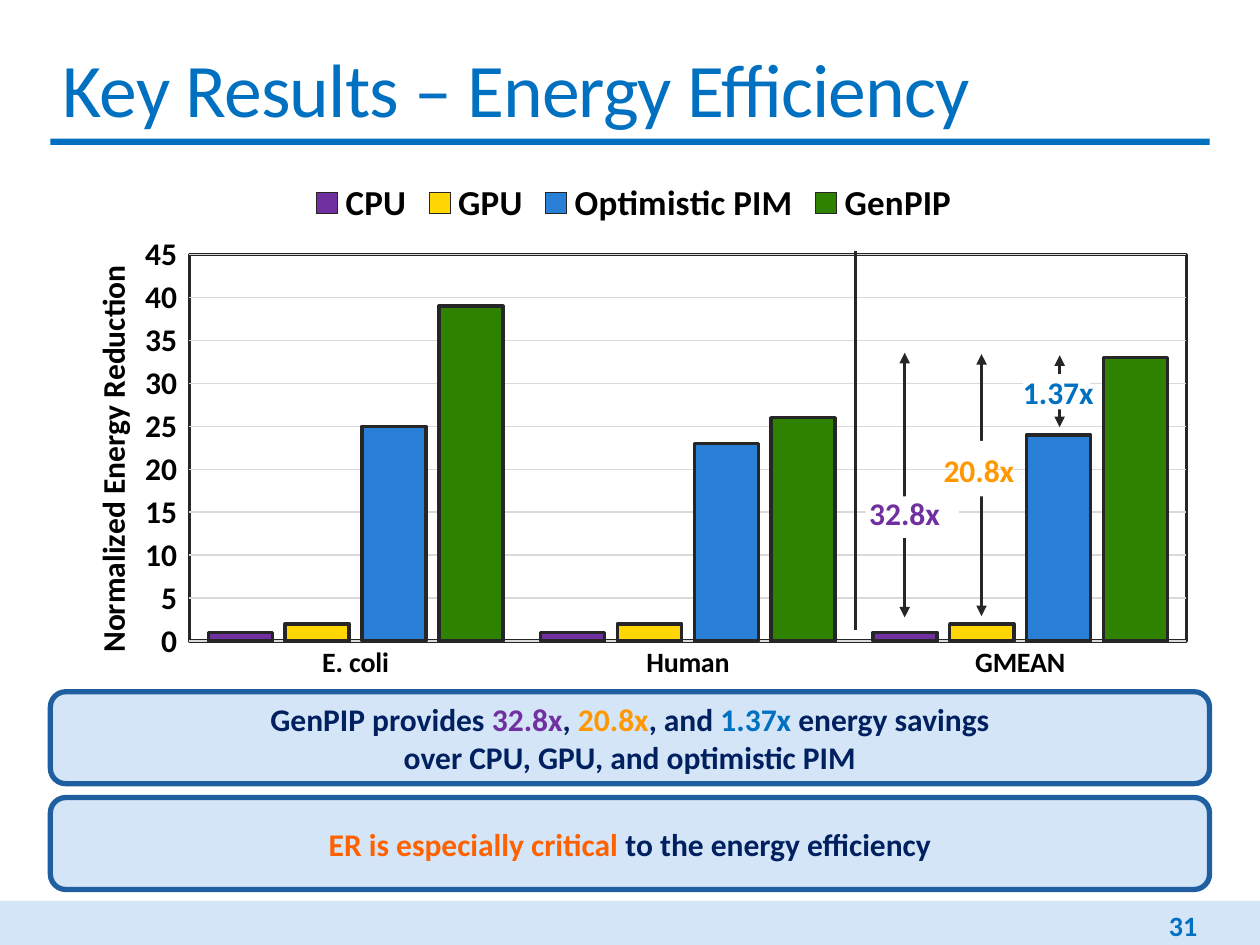
from dataclasses import dataclass

from lxml import etree
from pptx import Presentation
from pptx.chart.data import CategoryChartData
from pptx.dml.color import RGBColor
from pptx.enum.chart import XL_CHART_TYPE, XL_LEGEND_POSITION, XL_TICK_MARK
from pptx.enum.shapes import MSO_CONNECTOR, MSO_SHAPE
from pptx.enum.text import MSO_ANCHOR, PP_ALIGN
from pptx.oxml import parse_xml
from pptx.oxml.ns import nsdecls, qn
from pptx.util import Inches, Pt

COLUMN_CHART = XL_CHART_TYPE.COLUMN_CLUSTERED
LEGEND_TOP = XL_LEGEND_POSITION.TOP
TICK_NONE, TICK_OUT = XL_TICK_MARK.NONE, XL_TICK_MARK.OUTSIDE
STRAIGHT = MSO_CONNECTOR.STRAIGHT
RECTANGLE, ROUNDED = MSO_SHAPE.RECTANGLE, MSO_SHAPE.ROUNDED_RECTANGLE
TOP, MIDDLE = MSO_ANCHOR.TOP, MSO_ANCHOR.MIDDLE
LEFT, CENTER, RIGHT = PP_ALIGN.LEFT, PP_ALIGN.CENTER, PP_ALIGN.RIGHT


@dataclass(frozen=True)
class Theme:
    font: str = "Calibri"
    accent: str = "0070C0"
    pale: str = "D4E5F7"
    frame: str = "1F5FA0"
    navy: str = "002060"
    purple: str = "7030A0"
    amber: str = "FF9800"
    orange: str = "FE6200"
    yellow: str = "FFD602"
    blue: str = "297FD5"
    green: str = "2F8100"
    ink: str = "262626"
    grid: str = "D9D9D9"
    white: str = "FFFFFF"
    black: str = "000000"
    title_size: float = 43.2
    legend_size: int = 20
    body_size: int = 18
    small_size: int = 16


def rgb(color):
    return RGBColor.from_string(color)


class SlideBuilder:
    """Draws on one slide; lengths are cells of a 100 x 75 grid."""

    columns, rows = 100, 75

    def __init__(self, presentation, theme):
        self.theme = theme
        self.cell_width = presentation.slide_width / self.columns
        self.cell_height = presentation.slide_height / self.rows
        self.slide = presentation.slides.add_slide(presentation.slide_layouts[6])
        self.shapes = self.slide.shapes

    def point(self, column, row):
        return round(column * self.cell_width), round(row * self.cell_height)

    def box(self, column, row, width, height):
        return *self.point(column, row), *self.point(width, height)

    def set_font(self, font, size, color, bold=True):
        font.name, font.size, font.bold = self.theme.font, Pt(size), bold
        font.color.rgb = rgb(color)

    def set_text(self, shape, paragraphs, size, align=LEFT, anchor=TOP, bold=True):
        """Each paragraph is a list of (text, color) runs."""
        frame = shape.text_frame
        frame.word_wrap = True
        frame.vertical_anchor = anchor
        for index, runs in enumerate(paragraphs):
            paragraph = frame.add_paragraph() if index else frame.paragraphs[0]
            paragraph.alignment = align
            self.set_font(paragraph.font, size, runs[0][1], bold)
            for text, color in runs:
                run = paragraph.add_run()
                run.text = text
                run.font.color.rgb = rgb(color)
        return frame

    def text(self, place, text, size, color, **style):
        shape = self.shapes.add_textbox(*self.box(*place))
        return self.set_text(shape, [[(text, color)]], size, **style)

    def block(self, place, fill, kind=RECTANGLE, line=None):
        shape = self.shapes.add_shape(kind, *self.box(*place))
        shape.shadow.inherit = False
        shape.fill.solid()
        shape.fill.fore_color.rgb = rgb(fill)
        if line:
            shape.line.color.rgb, shape.line.width = rgb(line), Pt(3)
        else:
            shape.line.fill.background()
        return shape

    def message(self, row, paragraphs):
        shape = self.block((4, row, 92, 7.3), self.theme.pale, ROUNDED, self.theme.frame)
        self.set_text(shape, paragraphs, self.theme.body_size, CENTER, MIDDLE)

    def vertical_line(self, column, start, end, arrows=False):
        line = self.shapes.add_connector(
            STRAIGHT, *self.point(column, start), *self.point(column, end))
        line.line.color.rgb, line.line.width = rgb(self.theme.ink), Pt(2)
        if arrows:
            outline = line.line._get_or_add_ln()
            for end_name in ("a:headEnd", "a:tailEnd"):
                etree.SubElement(outline, qn(end_name), type="triangle")
        etree.SubElement(line._element.spPr, qn("a:effectLst"))

    def ratio(self, label, color, column, span, mask, text_place):
        """Double arrow with a gap in which the ratio stands."""
        self.shapes = self.slide.shapes.add_group_shape().shapes
        self.vertical_line(column, *span, arrows=True)
        self.block(mask, self.theme.white)
        frame = self.text(text_place, label, self.theme.body_size, color)
        frame.margin_right = 0
        self.shapes = self.slide.shapes

    def chart(self, place, categories, series, axis_title):
        theme = self.theme
        data = CategoryChartData()
        data.categories = categories
        for name, values, _ in series:
            data.add_series(name, values)
        chart = self.shapes.add_chart(COLUMN_CHART, *self.box(*place), data).chart
        chart.has_title = False
        self.set_font(chart.font, theme.small_size, theme.black)

        # Bars
        plot = chart.plots[0]
        plot.gap_width, plot.overlap, plot.vary_by_categories = 59, -20, False
        for bars, (_, _, color) in zip(plot.series, series):
            bars.format.fill.solid()
            bars.format.fill.fore_color.rgb = rgb(color)
            bars.format.line.color.rgb = rgb(theme.ink)
            bars.format.line.width = Pt(2)

        # Axes
        category, value = chart.category_axis, chart.value_axis
        category.major_tick_mark, value.major_tick_mark = TICK_NONE, TICK_OUT
        self.set_font(category.tick_labels.font, theme.small_size, theme.black)
        self.set_font(value.tick_labels.font, theme.body_size, theme.black)
        value.minimum_scale, value.maximum_scale, value.major_unit = 0, 45, 5
        value.format.line.fill.background()
        for line in (category.format.line, value.major_gridlines.format.line):
            line.color.rgb, line.width = rgb(theme.grid), Pt(0.75)
        title = value.axis_title
        title.text_frame.text = axis_title
        self.set_font(title.text_frame.paragraphs[0].font, theme.body_size, theme.black)

        # Legend
        chart.has_legend = True
        legend = chart.legend
        legend.position, legend.include_in_layout = LEGEND_TOP, False
        self.set_font(legend.font, theme.legend_size, theme.black)

        # Plot frame and fixed positions, as shares of the chart
        area = chart._chartSpace.chart.plotArea
        area.append(parse_xml(
            f'<c:spPr {nsdecls("c", "a")}><a:noFill/><a:ln w="{Pt(2)}"><a:solidFill>'
            f'<a:srgbClr val="{theme.ink}"/></a:solidFill></a:ln></c:spPr>'))
        self.place_part(area, 0, x=0.12, y=0.18, w=0.86, h=0.725)
        self.place_part(title._element, 1, x=0.03, y=0.19)
        self.place_part(legend._element, 1, x=0.22, y=0.03)

    @staticmethod
    def place_part(element, index, **shares):
        for old in element.findall(qn("c:layout")):
            element.remove(old)
        layout = etree.Element(qn("c:layout"))
        manual = etree.SubElement(layout, qn("c:manualLayout"))
        if "w" in shares:
            etree.SubElement(manual, qn("c:layoutTarget"), val="inner")
        for axis in "xy":
            etree.SubElement(manual, qn(f"c:{axis}Mode"), val="edge")
        for name, share in shares.items():
            etree.SubElement(manual, qn(f"c:{name}"), val=str(share))
        element.insert(index, layout)


def main():
    theme = Theme()
    presentation = Presentation()
    presentation.slide_width, presentation.slide_height = Inches(10), Inches(7.5)
    builder = SlideBuilder(presentation, theme)

    # Title, rule and footer
    builder.block((0, 71.5, 100, 4.1), theme.pale)
    builder.block((4, 11, 92, 0.5), theme.accent)
    title = builder.text((4, 2.8, 92, 8.2), "Key Results – Energy Efficiency",
                         theme.title_size, theme.accent, anchor=MIDDLE, bold=False)
    title.paragraphs[0].runs[0].font._element.set("spc", "-50")
    builder.text((82.2, 71.9, 13.8, 3), "31", theme.small_size, theme.accent,
                 align=RIGHT, anchor=MIDDLE)

    # Energy chart
    builder.chart((4, 12.6, 92, 42.3), ["E. coli", "Human", "GMEAN"], [
        ("CPU", (1, 1, 1), theme.purple),
        ("GPU", (2, 2, 2), theme.yellow),
        ("Optimistic PIM", (25, 23, 24), theme.blue),
        ("GenPIP", (39, 26, 33), theme.green),
    ], "Normalized Energy Reduction")
    builder.vertical_line(67.9, 19.9, 50)

    # Ratios between GenPIP and the other systems
    builder.ratio("32.8x", theme.purple, 71.8, (49, 28),
                  (68.7, 39.4, 7.4, 3.3), (68, 38.7, 9, 4))
    builder.ratio("20.8x", theme.amber, 77.9, (48.9, 28.1),
                  (76.6, 35, 2.4, 4.4), (73.9, 35.3, 8.3, 4))
    builder.ratio("1.37x", theme.accent, 84.1, (33.9, 28.2),
                  (81.2, 29.7, 5.3, 2.8), (80.2, 29.1, 7.8, 4))

    # Takeaways
    builder.message(54.9, [
        [("GenPIP provides ", theme.navy), ("32.8x", theme.purple), (", ", theme.navy),
         ("20.8x", theme.amber), (", and ", theme.navy), ("1.37x ", theme.accent),
         ("energy savings", theme.navy)],
        [("over CPU, GPU, and optimistic PIM", theme.navy)],
    ])
    builder.message(63.3, [[("ER is especially critical ", theme.orange),
                            ("to the energy efficiency", theme.navy)]])

    presentation.save("out.pptx")


if __name__ == "__main__":
    main()
